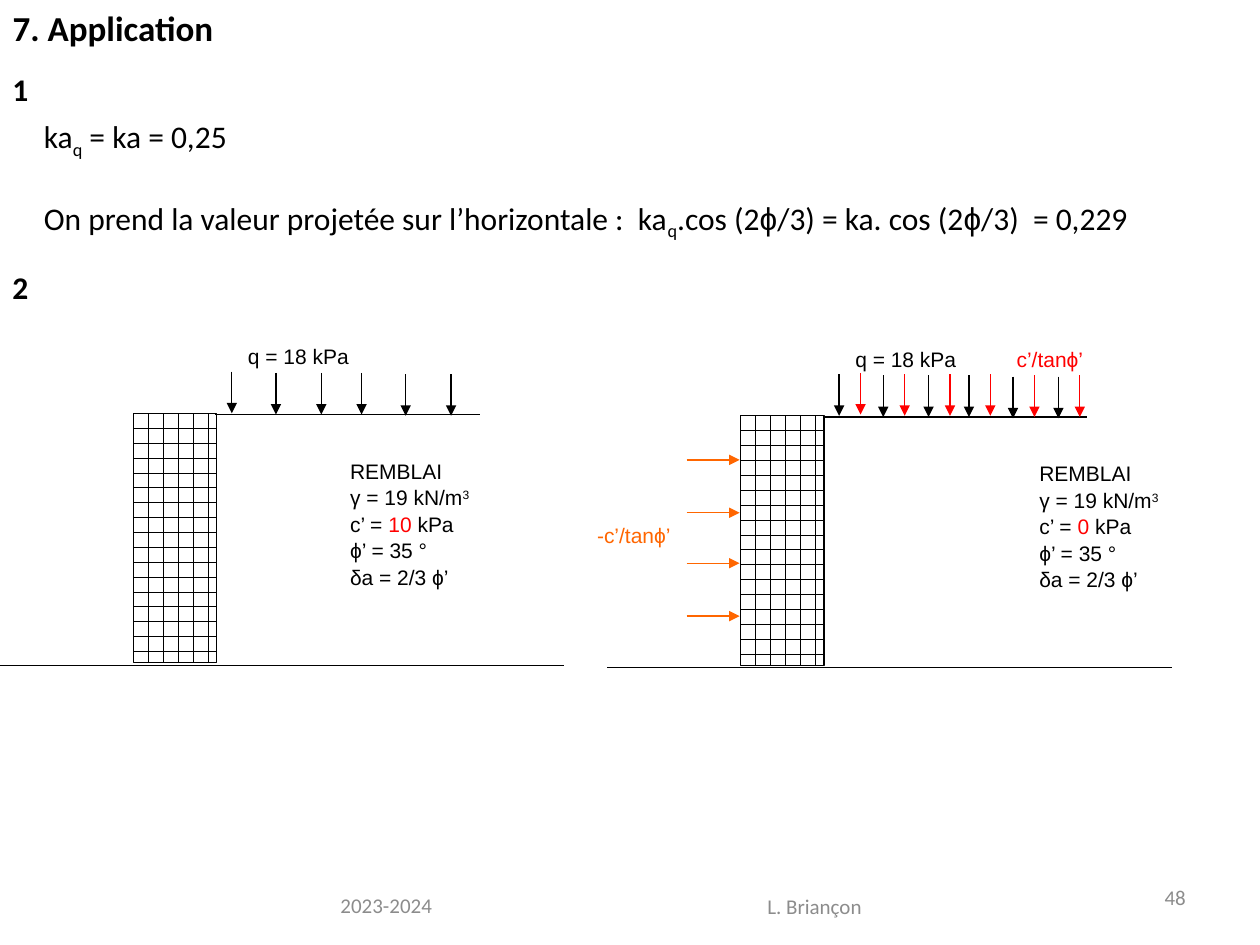
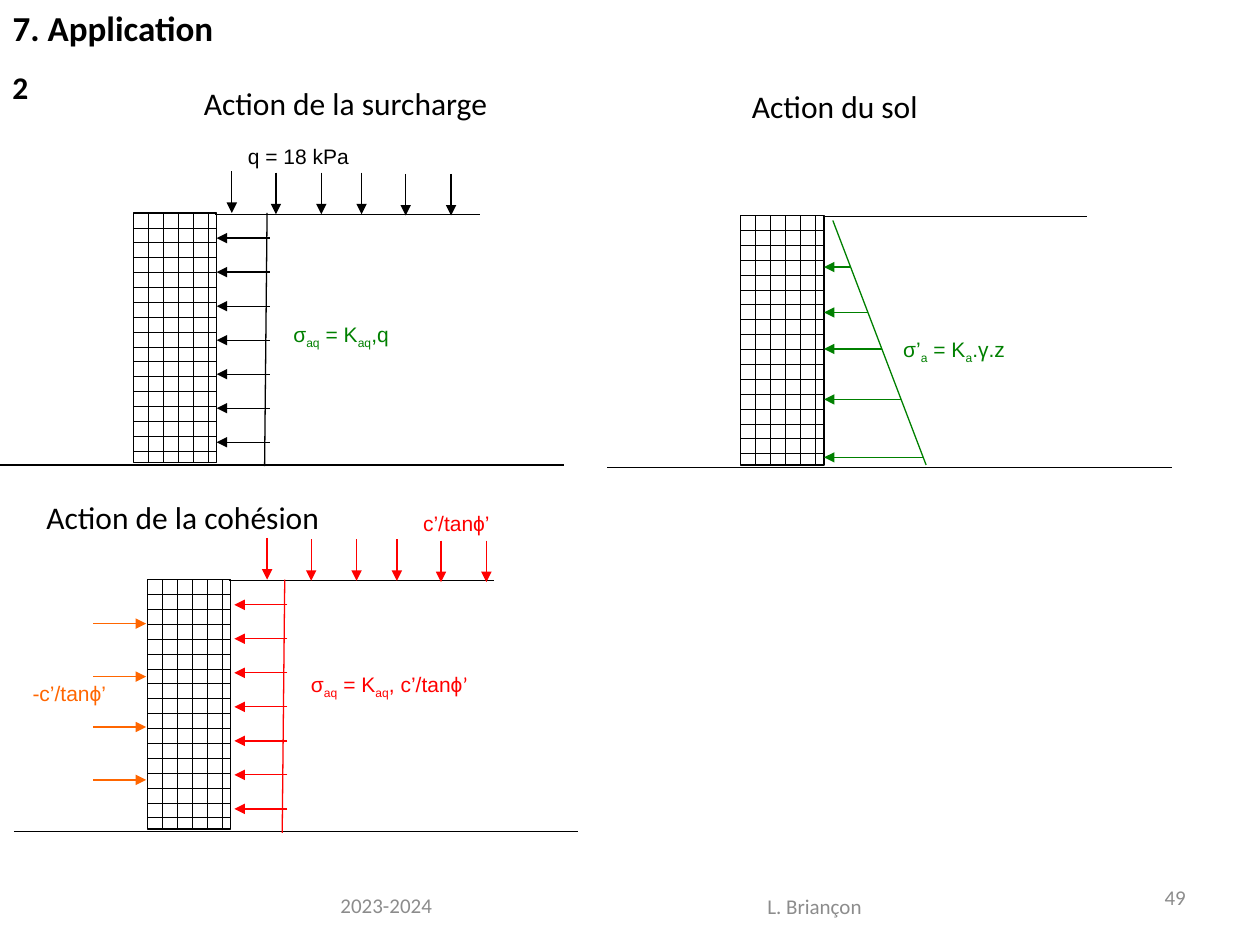
from lxml import etree
from pptx import Presentation
from pptx.dml.color import RGBColor
from pptx.enum import dml, shapes, text
from pptx.oxml import ns
from pptx.util import Inches, Pt

BLACK = RGBColor(0x00, 0x00, 0x00)
WHITE = RGBColor(0xFF, 0xFF, 0xFF)
GREY = RGBColor(0x8C, 0x8C, 0x8C)
RED = RGBColor(0xFF, 0x00, 0x00)
ORANGE = RGBColor(0xFF, 0x66, 0x00)
GREEN = RGBColor(0x00, 0x80, 0x00)

TITLE = {"size": Pt(20), "name": "Calibri", "bold": True}
NUMBER = {"size": Pt(18), "name": "Calibri", "bold": True}
BODY = {"size": Pt(18), "name": "Calibri"}
FOOTER = {"size": Pt(12), "name": "Calibri"}
LABEL = {"size": Pt(12), "name": "Arial"}

SUB = {"baseline": -25}
SUPER = {"baseline": 30}
PHI = ("ϕ", {"name": "Arial"})

WALL_WIDTH, WALL_HEIGHT = 0.66, 1.98
LOAD_OFFSETS = (0.78, 1.13, 1.49, 1.81, 2.16, 2.52)
LOAD_DROPS = (0, 0.01, 0.01, 0.01, 0.02, 0.02)
FRONT_DEPTHS = (0.35, 0.77, 1.17, 1.59)
SOIL_DEPTHS = (0.41, 0.77, 1.06, 1.46, 1.92)
COHESION = "c’/tanϕ’"


def write_span(para, words, style, color, baseline=0, **changes):
    span = para.add_run()
    span.text = words
    for name, value in {**style, **changes}.items():
        setattr(span.font, name, value)
    span.font.color.rgb = color
    if baseline:
        span._r.get_or_add_rPr().set("baseline", str(baseline * 1000))


def fill_text(box, lines, style, color=BLACK, align=text.PP_ALIGN.LEFT,
              anchor=text.MSO_ANCHOR.TOP, gap=0, spacing=None):
    """Write lines; each is a string or a list of strings and (words, changes)."""
    frame = box.text_frame
    for name, value in {"word_wrap": True, "auto_size": text.MSO_AUTO_SIZE.NONE,
                        "vertical_anchor": anchor}.items():
        setattr(frame, name, value)
    for index, line in enumerate(lines):
        para = frame.add_paragraph() if index else frame.paragraphs[0]
        para.alignment = align
        if spacing:
            para.line_spacing = spacing
        if index and gap:
            para.space_before = Pt(gap)
        for part in [line] if isinstance(line, str) else line:
            words, changes = (part, {}) if isinstance(part, str) else part
            options = {"color": color, **changes}
            write_span(para, words, style, **options)


def add_text(page, left, top, width, height, lines, style, **options):
    box = page.shapes.add_textbox(*map(Inches, (left, top, width, height)))
    fill_text(box, lines, style, **options)


def add_line(page, start, end, color=BLACK, arrow=False):
    line = page.shapes.add_connector(shapes.MSO_CONNECTOR.STRAIGHT,
                                     *map(Inches, (*start, *end)))
    line.line.color.rgb = color
    line.line.width = Pt(0.75)
    if arrow:
        etree.SubElement(line.line._get_or_add_ln(), ns.qn("a:tailEnd"), type="triangle")
    etree.SubElement(line._element.spPr, ns.qn("a:effectLst"))


def add_page(deck, number):
    """Add a slide with the shared title and footers."""
    page = deck.slides.add_slide(deck.slide_layouts[5])
    title = page.shapes.title
    for name, value in {"left": 0, "top": 0, "width": 3, "height": 0.44}.items():
        setattr(title, name, Inches(value))
    fill_text(title, ["7. Application"], TITLE)
    center, right = text.PP_ALIGN.CENTER, text.PP_ALIGN.RIGHT
    for left, top, width, words, align in (
            (1.02, 6.98, 4.09, "2023-2024", center),
            (4.88, 6.99, 3.17, "L. Briançon", center),
            (7.18, 6.92, 2.33, str(number), right)):
        add_text(page, left, top, width, 0.4, [words], FOOTER, color=GREY,
                 align=align, anchor=text.MSO_ANCHOR.MIDDLE)
    return page


def add_number(page, top, number):
    add_text(page, 0, top, 0.6, 0.4, [number], NUMBER)


def add_heading(page, left, top, words):
    add_text(page, left, top, 3, 0.4, [words], BODY)


class WallDiagram:
    """A retaining wall whose parts are placed from the wall's top left corner."""

    def __init__(self, page, left, top):
        self.page, self.left, self.top = page, left, top
        wall = page.shapes.add_shape(
            shapes.MSO_SHAPE.RECTANGLE,
            *map(Inches, (left, top, WALL_WIDTH, WALL_HEIGHT)))
        wall.shadow.inherit = False
        wall.fill.patterned()
        wall.fill.pattern = dml.MSO_PATTERN.HORIZONTAL_BRICK
        wall.fill.fore_color.rgb = BLACK
        wall.fill.back_color.rgb = WHITE
        wall.line.color.rgb = BLACK
        wall.line.width = Pt(0.75)
        self.line((0.65, 0.01), (2.75, 0.01))
        self.line((-1.06, 2), (3.42, 2))

    def line(self, start, end, color=BLACK, arrow=False):
        start, end = ((self.left + x, self.top + y) for x, y in (start, end))
        add_line(self.page, start, end, color, arrow)

    def label(self, x, y, line, color=BLACK, width=1.94):
        add_text(self.page, self.left + x, self.top + y, width, 0.44, [line],
                 LABEL, color=color)

    def load(self, color=BLACK, shift=0.0, lift=0.0):
        """Draw the arrows standing on the backfill."""
        for x, drop in zip(LOAD_OFFSETS, LOAD_DROPS):
            y = drop - lift
            self.line((x + shift, y - 0.33), (x + shift, y), color, arrow=True)

    def surcharge(self):
        self.load()
        self.label(0.81, -0.6, "q = 18 kPa", width=1.27)

    def cohesion(self, front_x, front_y, lift=0.0):
        """Draw the cohesion as a load on top and a push on the front."""
        self.load(RED, 0.17, lift)
        self.label(2.09, -0.6, COHESION, RED, width=0.91)
        self.label(front_x, front_y, "-" + COHESION, ORANGE, width=0.91)
        for y in FRONT_DEPTHS:
            self.line((-0.43, y), (-0.01, y), ORANGE, arrow=True)

    def backfill(self, x, cohesion):
        lines = ["REMBLAI",
                 ["γ = 19 kN/m", ("3", SUPER)],
                 ["c’ = ", (cohesion, {"color": RED}), " kPa"],
                 "ϕ’ = 35 °",
                 "δa = 2/3 ϕ’"]
        add_text(self.page, self.left + x, self.top + 0.3, 1.69, 1.3, lines,
                 LABEL, spacing=1.05)

    def uniform_pressure(self, color=BLACK, shift=0.0):
        self.line((1.06 + shift, 0), (1.04 + shift, 2.01), color)
        for step in range(7):
            y = 0.2 + 0.27 * step
            self.line((1.08 + shift, y), (0.66 + shift, y), color, arrow=True)

    def soil_pressure(self):
        """Draw the triangular pressure, growing with depth."""
        top, bottom = (0.73, 0.04), (1.47, 1.98)
        self.line(top, bottom, GREEN)
        slope = (bottom[0] - top[0]) / (bottom[1] - top[1])
        for y in SOIL_DEPTHS:
            self.line((top[0] + slope * (y - top[1]), y), (0.66, y), GREEN, arrow=True)


def build_data_page(deck):
    page = add_page(deck, 48)
    add_number(page, 0.51, "1")
    formulas = [
        ["ka", ("q", SUB), " = ka = 0,25"],
        ["On prend la valeur projetée sur l’horizontale :  ka", ("q", SUB),
         ".cos (2", PHI, "/3) = ka. cos (2", PHI, "/3)  = 0,229"]]
    add_text(page, 0.25, 0.88, 9.32, 1.01, formulas, BODY, gap=22)
    add_number(page, 2.08, "2")

    actual = WallDiagram(page, 1.06, 3.28)
    actual.surcharge()
    actual.backfill(1.62, "10")

    equivalent = WallDiagram(page, 5.88, 3.3)
    equivalent.surcharge()
    equivalent.cohesion(-1.24, 0.8, lift=0.01)
    equivalent.backfill(2.27, "0")


def build_actions_page(deck):
    page = add_page(deck, 49)
    add_number(page, 0.49, "2")
    sigma_q = ["σ", ("aq", SUB), " = K", ("aq", SUB)]

    add_heading(page, 1.52, 0.62, "Action de la surcharge")
    surcharge = WallDiagram(page, 1.06, 1.69)
    surcharge.surcharge()
    surcharge.uniform_pressure()
    surcharge.label(1.17, 0.81, sigma_q + [",q"], GREEN)

    add_heading(page, 5.87, 0.64, "Action du sol")
    soil = WallDiagram(page, 5.88, 1.71)
    soil.soil_pressure()
    soil.label(1.19, 0.91, ["σ’", ("a", SUB), " = K", ("a", SUB), ".γ.z"], GREEN)

    add_heading(page, 0.27, 3.9, "Action de la cohésion")
    cohesion = WallDiagram(page, 1.17, 4.6)
    cohesion.cohesion(-1.01, 0.75)
    cohesion.uniform_pressure(RED, 0.03)
    cohesion.label(1.2, 0.68, sigma_q + [", c’/tanϕ", ("’", {"name": "Calibri"})], RED)


def main():
    deck = Presentation()
    deck.slide_width, deck.slide_height = Inches(10), Inches(7.5)
    build_data_page(deck)
    build_actions_page(deck)
    deck.save("out.pptx")


if __name__ == "__main__":
    main()
